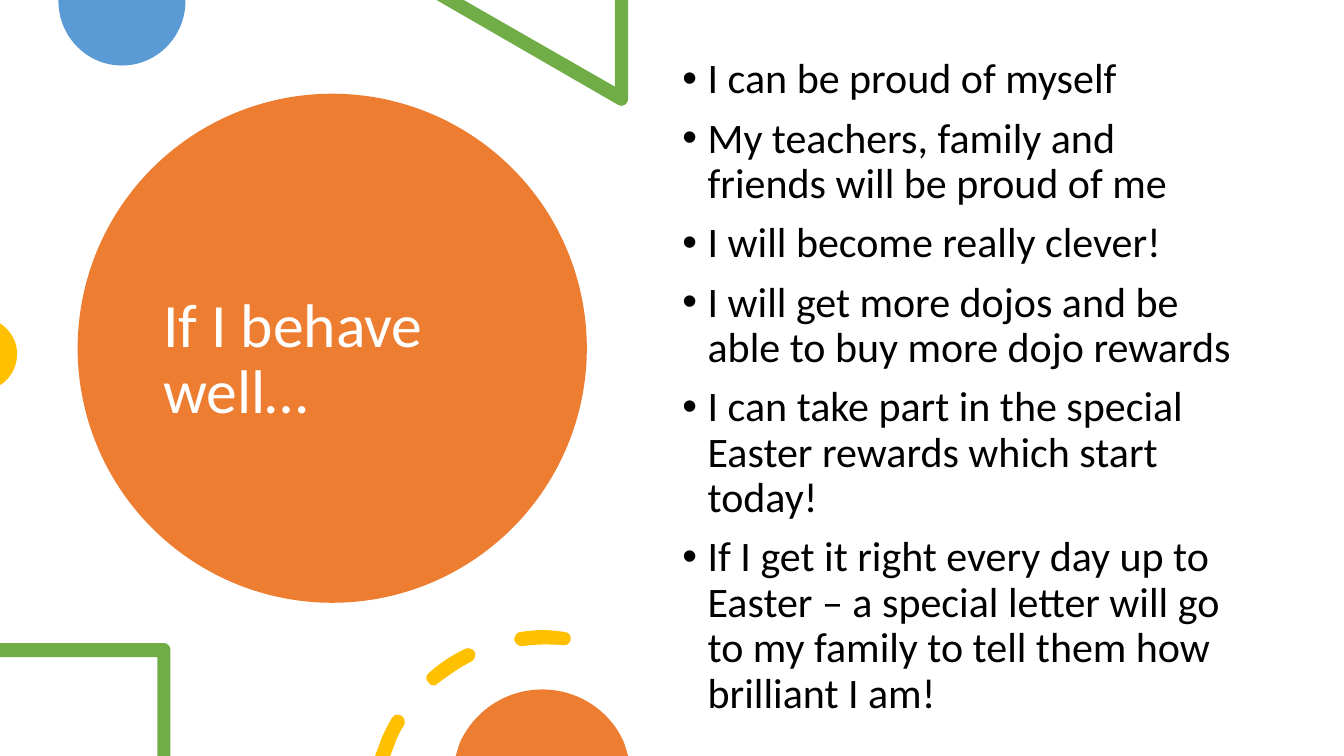
import pptx
import pptx.dml.color
import pptx.enum.shapes
import pptx.enum.text
import pptx.oxml.ns
import pptx.util
from lxml import etree

PX = 9144  # EMU in one px, 100 px to the inch

ORANGE, BLUE, GREEN, YELLOW = "ED7D31", "5B9BD5", "70AD47", "FFC000"
WHITE, BLACK = "FFFFFF", "000000"

TITLE = "If I behave well…"
REWARDS = [
    "I can be proud of myself",
    "My teachers, family and friends will be proud of me",
    "I will become really clever!",
    "I will get more dojos and be able to buy more dojo rewards",
    "I can take part in the special Easter rewards which start today!",
    "If I get it right every day up to Easter – a special letter will go "
    "to my family to tell them how brilliant I am!",
]

# Outlines in px: a pair is a corner, six numbers are a Bézier curve
BLUE_DISC = [(184, 0), (58, 0), (58, 1), (58, 36, 86, 65, 121, 65),
             (156, 65, 184, 36, 184, 1)]
GREEN_TRIANGLE = [(623, 0), (610, 0), (610, 86), (460, 0), (433, 0), (613, 104),
                  (614, 105, 615, 105, 616, 105), (620, 105, 623, 102, 623, 98)]
YELLOW_DISC = [(0, 321), (0, 382), (2, 381), (11, 374, 17, 364, 17, 351),
               (17, 339, 11, 329, 2, 322)]
GREEN_SQUARE = [(163, 638), (0, 638), (0, 652), (156, 652), (156, 750),
                (169, 750), (169, 645), (169, 641, 166, 638, 163, 638)]
ORANGE_DISC = [(538, 684), (501, 684, 470, 706, 456, 737), (452, 750),
               (623, 750), (619, 737), (606, 706, 574, 684, 538, 684)]
LOWER_DASH = [(395, 709), (393, 708, 390, 710, 389, 712),
              (385, 718, 382, 725, 379, 731), (372, 750), (387, 750), (392, 737),
              (394, 731, 397, 725, 401, 719), (402, 716, 401, 711, 398, 710),
              (397, 709, 396, 709, 395, 709)]
MIDDLE_DASH = [(464, 643), (463, 643, 462, 643, 461, 644),
               (448, 650, 436, 658, 425, 668), (422, 670, 422, 675, 425, 677),
               (426, 679, 428, 680, 430, 680), (430, 680),
               (432, 680, 433, 679, 434, 678),
               (445, 670, 456, 662, 468, 656), (471, 654, 472, 650, 471, 647),
               (469, 644, 467, 643, 464, 643)]
UPPER_DASH = [(538, 625), (531, 625, 524, 626, 516, 627),
              (513, 627, 510, 631, 510, 635), (511, 638, 514, 641, 517, 641),
              (518, 641, 518, 641, 518, 641), (532, 639, 545, 639, 558, 640),
              (562, 641, 565, 638, 566, 635), (567, 631, 564, 627, 560, 627),
              (560, 627, 560, 627, 560, 627), (553, 626, 545, 625, 538, 625)]


def color(hex_code):
    return pptx.dml.color.RGBColor.from_string(hex_code)


def paint(shape, hex_code):
    shape.shadow.inherit = False
    shape.fill.solid()
    shape.fill.fore_color.rgb = color(hex_code)
    shape.line.fill.background()


def trace(outline):
    """Corners and curve controls of an outline, in EMU."""
    return [(part[i] * PX, part[i + 1] * PX)
            for part in outline for i in range(0, len(part), 2)]


def bend(shape, outlines):
    """Join the three segments that stand for each curve into one Bézier."""
    segments = iter(list(shape._element.iter(pptx.oxml.ns.qn("a:lnTo"))))
    for outline in outlines:
        for part in outline[1:]:
            first, *others = [next(segments) for _ in range(len(part) // 2)]
            if others:
                first.tag = pptx.oxml.ns.qn("a:cubicBezTo")
            for other in others:
                first.append(other[0])
                other.getparent().remove(other)


def add_outline(slide, hex_code, *outlines):
    contours = [trace(outline) for outline in outlines]
    builder = slide.shapes.build_freeform(*contours[0][0])
    for index, contour in enumerate(contours):
        if index:
            builder.move_to(*contour[0])
        builder.add_line_segments(contour[1:], close=True)
    shape = builder.convert_to_shape()
    bend(shape, outlines)
    paint(shape, hex_code)


def add_circle(slide, left, top, size, hex_code):
    circle = slide.shapes.add_shape(
        pptx.enum.shapes.MSO_SHAPE.OVAL, left * PX, top * PX, size * PX, size * PX)
    paint(circle, hex_code)


def add_bullet(paragraph):
    properties = paragraph._p.get_or_add_pPr()
    properties.set("marL", str(25 * PX))
    properties.set("indent", str(-25 * PX))
    for tag, attribute, value in (("a:buFont", "typeface", "Arial"),
                                  ("a:buChar", "char", "•")):
        etree.SubElement(properties, pptx.oxml.ns.qn(tag)).set(attribute, value)


def add_text(slide, box, lines, size, hex_code, anchor, bulleted=False):
    frame = slide.shapes.add_textbox(*(length * PX for length in box)).text_frame
    for name, value in {"word_wrap": True, "vertical_anchor": anchor}.items():
        setattr(frame, name, value)
    font_format = {"name": "Calibri", "size": pptx.util.Pt(size)}
    for index, line in enumerate(lines):
        paragraph = frame.add_paragraph() if index else frame.paragraphs[0]
        if bulleted:
            add_bullet(paragraph)
        paragraph.line_spacing = 0.9
        if index:
            paragraph.space_before = pptx.util.Pt(10)
        run = paragraph.add_run()
        run.text = line
        for name, value in font_format.items():
            setattr(run.font, name, value)
        run.font.color.rgb = color(hex_code)


def main():
    deck = pptx.Presentation()
    deck.slide_width, deck.slide_height = 1333 * PX, 750 * PX
    slide = deck.slides.add_slide(deck.slide_layouts[6])
    anchors = pptx.enum.text.MSO_ANCHOR

    # Title in its circle
    add_circle(slide, 77, 93, 505, ORANGE)
    add_text(slide, (152, 135, 354, 445), [TITLE], 44, WHITE, anchors.MIDDLE)

    # Decoration along the top and left edges
    add_outline(slide, BLUE, BLUE_DISC)
    add_outline(slide, GREEN, GREEN_TRIANGLE)
    add_outline(slide, YELLOW, YELLOW_DISC)

    # List of rewards
    add_text(slide, (667, 52, 575, 535), REWARDS, 30, BLACK, anchors.TOP,
             bulleted=True)

    # Decoration along the bottom
    add_outline(slide, GREEN, GREEN_SQUARE)
    add_outline(slide, YELLOW, LOWER_DASH, MIDDLE_DASH, UPPER_DASH)
    add_outline(slide, ORANGE, ORANGE_DISC)

    deck.save("out.pptx")


if __name__ == "__main__":
    main()
